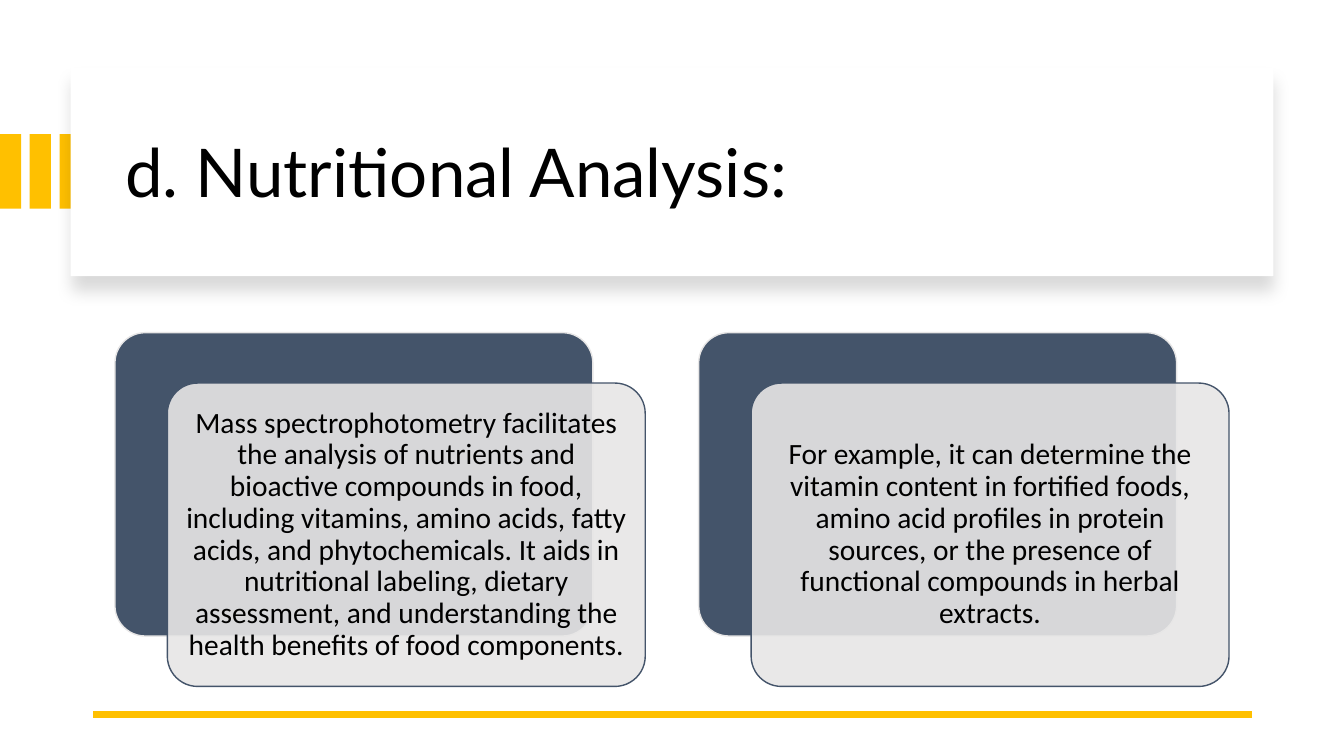
import pptx
import pptx.util
import pptx.dml.color
import pptx.enum.shapes
import pptx.enum.text
import pptx.oxml
import pptx.oxml.ns
from dataclasses import dataclass

Inches = pptx.util.Inches
Pt = pptx.util.Pt
SHAPE = pptx.enum.shapes.MSO_SHAPE

HEADING = "d. Nutritional Analysis:"
POINTS = [
    "Mass spectrophotometry facilitates the analysis of nutrients and bioactive "
    "compounds in food, including vitamins, amino acids, fatty acids, and "
    "phytochemicals. It aids in nutritional labeling, dietary assessment, and "
    "understanding the health benefits of food components.",
    "For example, it can determine the vitamin content in fortified foods, amino "
    "acid profiles in protein sources, or the presence of functional compounds in "
    "herbal extracts.",
]


@dataclass(frozen=True)
class Theme:
    accent: str = "FFC000"
    panel: str = "FFFFFF"
    dark: str = "44546A"
    light: str = "E7E6E6"
    ink: str = "000000"
    heading_font: str = "Lato"
    body_font: str = "Calibri"
    heading_size: int = 48
    body_size: int = 21


THEME = Theme()
STRIPE_COUNT, STRIPE_PITCH = 3, 0.295
CARD_LEFT, CARD_TOP, CARD_PITCH = 1.14, 3.3, 5.79
CARD_WIDTH, CARD_HEIGHT = 4.74, 3.01
CARD_SHIFT_X, CARD_SHIFT_Y = 0.52, 0.5


def rgb(color):
    return pptx.dml.color.RGBColor.from_string(color)


def add_block(slide, preset, left, top, width, height, fill, outline=None):
    block = slide.shapes.add_shape(
        preset, Inches(left), Inches(top), Inches(width), Inches(height))
    block.shadow.inherit = False
    block.fill.solid()
    block.fill.fore_color.rgb = rgb(fill)
    if outline:
        block.line.color.rgb = rgb(outline)
        block.line.width = Pt(1)
    else:
        block.line.fill.background()
    return block


def write(frame, words, font, size):
    frame.word_wrap = True
    frame.vertical_anchor = pptx.enum.text.MSO_ANCHOR.MIDDLE
    paragraph = frame.paragraphs[0]
    paragraph.line_spacing = 0.9
    run = paragraph.add_run()
    run.text = words
    run.font.name = font
    run.font.size = Pt(size)
    run.font.color.rgb = rgb(THEME.ink)
    return paragraph


def add_soft_shadow(block):
    effects = block._element.spPr.find(pptx.oxml.ns.qn("a:effectLst"))
    effects.append(pptx.oxml.parse_xml(
        f'<a:outerShdw {pptx.oxml.ns.nsdecls("a")} blurRad="{Pt(11)}" dist="{Pt(10)}" '
        'dir="5400000" algn="t" rotWithShape="0">'
        f'<a:srgbClr val="{THEME.ink}"><a:alpha val="15000"/></a:srgbClr></a:outerShdw>'))


def add_heading(slide):
    for index in range(STRIPE_COUNT):
        add_block(slide, SHAPE.RECTANGLE, index * STRIPE_PITCH, 1.33, 0.21, 0.74, THEME.accent)
    panel = add_block(slide, SHAPE.RECTANGLE, 0.7, 0.67, 11.93, 2.07, THEME.panel)
    add_soft_shadow(panel)

    heading = slide.shapes.title
    heading.left, heading.top = Inches(1.14), Inches(0.89)
    heading.width, heading.height = Inches(11.13), Inches(1.7)
    paragraph = write(heading.text_frame, HEADING, THEME.heading_font, THEME.heading_size)
    paragraph.alignment = pptx.enum.text.PP_ALIGN.LEFT
    panel._element.addnext(heading._element)


def add_rule(slide):
    rule = slide.shapes.add_connector(
        pptx.enum.shapes.MSO_CONNECTOR.STRAIGHT,
        Inches(12.42), Inches(7.09), Inches(0.92), Inches(7.09))
    rule.line.color.rgb = rgb(THEME.accent)
    rule.line.width = Pt(4.5)
    pptx.oxml.ns.qn("a:effectLst")
    rule._element.spPr.append(
        pptx.oxml.parse_xml(f'<a:effectLst {pptx.oxml.ns.nsdecls("a")}/>'))


def add_card(slide, left, point):
    back = add_block(slide, SHAPE.ROUNDED_RECTANGLE, left, CARD_TOP,
                     CARD_WIDTH, CARD_HEIGHT, THEME.dark, THEME.light)
    front = add_block(slide, SHAPE.ROUNDED_RECTANGLE, left + CARD_SHIFT_X,
                      CARD_TOP + CARD_SHIFT_Y, CARD_WIDTH, CARD_HEIGHT,
                      THEME.light, THEME.dark)
    back.adjustments[0] = front.adjustments[0] = 0.1
    front_color = front._element.spPr.find(
        pptx.oxml.ns.qn("a:solidFill")).find(pptx.oxml.ns.qn("a:srgbClr"))
    front_color.append(pptx.oxml.parse_xml(
        f'<a:alpha {pptx.oxml.ns.nsdecls("a")} val="90000"/>'))

    frame = front.text_frame
    frame.margin_left = frame.margin_right = Inches(0.08)
    frame.margin_top = frame.margin_bottom = Inches(0.08)
    paragraph = write(frame, point, THEME.body_font, THEME.body_size)
    paragraph.alignment = pptx.enum.text.PP_ALIGN.CENTER


def main():
    deck = pptx.Presentation()
    deck.slide_width, deck.slide_height = Inches(13.33), Inches(7.5)
    slide = deck.slides.add_slide(deck.slide_layouts.get_by_name("Title Only"))
    add_heading(slide)
    add_rule(slide)
    for index, point in enumerate(POINTS):
        add_card(slide, CARD_LEFT + index * CARD_PITCH, point)
    deck.save("out.pptx")


if __name__ == "__main__":
    main()
